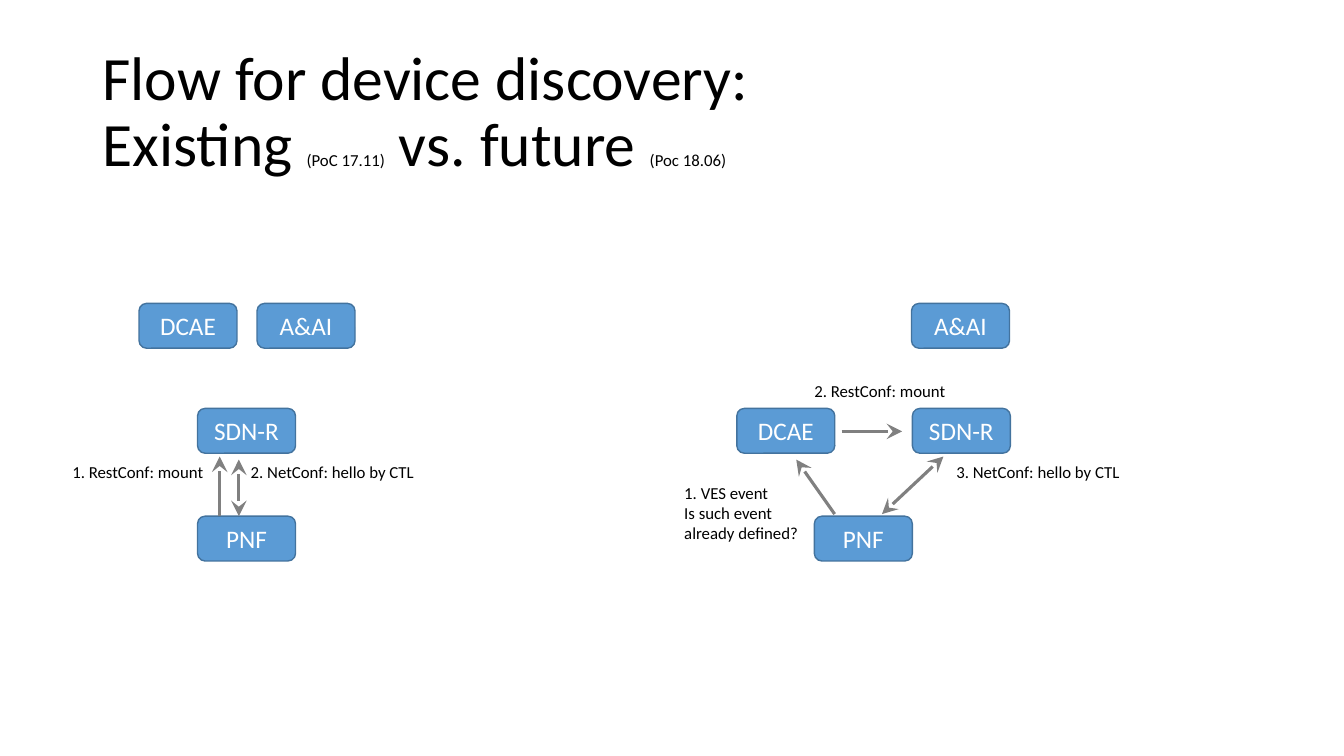
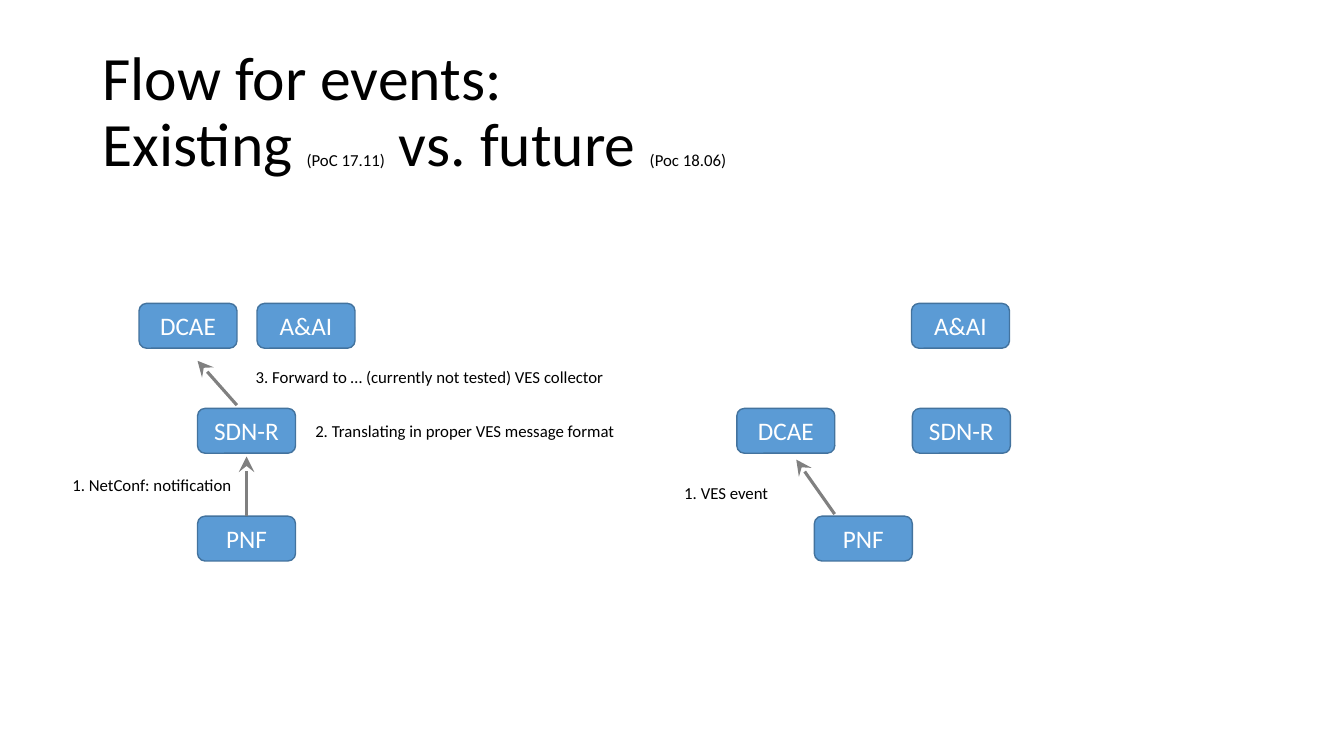
from typing import NamedTuple

from lxml import etree
from pptx import Presentation
from pptx.dml.color import RGBColor
from pptx.enum.shapes import MSO_CONNECTOR, MSO_SHAPE
from pptx.enum.text import MSO_ANCHOR, MSO_AUTO_SIZE, PP_ALIGN
from pptx.oxml.ns import qn
from pptx.util import Pt

FONT = "Calibri"
BLACK = RGBColor(0x00, 0x00, 0x00)
WHITE = RGBColor(0xFF, 0xFF, 0xFF)
NODE_BLUE = RGBColor(0x5B, 0x9B, 0xD5)
NODE_BORDER = RGBColor(0x43, 0x73, 0x9E)
ARROW_GREY = RGBColor(0x80, 0x80, 0x80)

TITLE_SIZE, NOTE_SIZE, NODE_TEXT_SIZE = 44, 12, 18
NODE_WIDTH, NODE_HEIGHT = 70, 32
LABEL_HEIGHT = 21.6

# Both panels share one top edge and three rows of nodes, measured from it.
PANEL_TOP, EXISTING_LEFT, FUTURE_LEFT = 216.7, 44.6, 481.7
ROW_1, ROW_2, ROW_3 = 0, 75, 152

EXISTING_NODES = {
    "DCAE": (54.7, ROW_1),
    "A&AI": (139, ROW_1),
    "SDN-R": (96.5, ROW_2),
    "PNF": (96.5, ROW_3),
}
FUTURE_NODES = {
    "DCAE": (44.6, ROW_2),
    "A&AI": (169.4, ROW_1),
    "SDN-R": (170, ROW_2),
    "PNF": (100, ROW_3),
}


class Arrow(NamedTuple):
    start: tuple
    end: tuple
    two_way: bool = False
    source: str = ""  # node whose top middle the arrow leaves from


class Label(NamedTuple):
    lines: tuple
    left: float
    top: float
    width: float


VES_ARROW = Arrow((114.5, 150.5), (87.1, 111.6))


def add_run(paragraph, text, size, colour):
    run = paragraph.add_run()
    run.text = text
    run.font.name = FONT
    run.font.size = Pt(size)
    run.font.color.rgb = colour


def add_title(slide, subject):
    title = slide.shapes.title
    title.left, title.top, title.width, title.height = Pt(66), Pt(28.8), Pt(828), Pt(104.4)
    frame = title.text_frame
    frame.auto_size = MSO_AUTO_SIZE.NONE
    frame.vertical_anchor = MSO_ANCHOR.MIDDLE
    heading = frame.paragraphs[0]
    heading.alignment = PP_ALIGN.LEFT
    heading.line_spacing = 0.9
    add_run(heading, subject, TITLE_SIZE, BLACK)
    heading.add_line_break()
    for text, size in (
        ("Existing ", TITLE_SIZE),
        ("(PoC 17.11)", NOTE_SIZE),
        (" vs. future ", TITLE_SIZE),
        ("(Poc 18.06)", NOTE_SIZE),
    ):
        add_run(heading, text, size, BLACK)


def add_node(slide, name, left, top):
    node = slide.shapes.add_shape(
        MSO_SHAPE.ROUNDED_RECTANGLE, Pt(left), Pt(top), Pt(NODE_WIDTH), Pt(NODE_HEIGHT)
    )
    node.shadow.inherit = False
    node.fill.solid()
    node.fill.fore_color.rgb = NODE_BLUE
    node.line.color.rgb = NODE_BORDER
    node.line.width = Pt(1)
    node.text_frame.vertical_anchor = MSO_ANCHOR.MIDDLE
    paragraph = node.text_frame.paragraphs[0]
    paragraph.alignment = PP_ALIGN.CENTER
    add_run(paragraph, name, NODE_TEXT_SIZE, WHITE)
    return node


def add_arrow(slide, arrow, left, top, nodes):
    (x1, y1), (x2, y2) = arrow.start, arrow.end
    connector = slide.shapes.add_connector(
        MSO_CONNECTOR.STRAIGHT, Pt(left + x1), Pt(top + y1), Pt(left + x2), Pt(top + y2)
    )
    if arrow.source:
        connector.begin_connect(nodes[arrow.source], 0)
    connector.line.color.rgb = ARROW_GREY
    connector.line.width = Pt(2.25)
    line = connector.line._get_or_add_ln()
    for end in ("a:headEnd", "a:tailEnd") if arrow.two_way else ("a:tailEnd",):
        etree.SubElement(line, qn(end), type="stealth", w="lg", len="lg")
    etree.SubElement(connector._element.spPr, qn("a:effectLst"))


def add_label(slide, label, left, top):
    box = slide.shapes.add_textbox(
        Pt(left + label.left), Pt(top + label.top), Pt(label.width), Pt(LABEL_HEIGHT)
    )
    frame = box.text_frame
    frame.word_wrap = True
    frame.auto_size = MSO_AUTO_SIZE.SHAPE_TO_FIT_TEXT
    paragraph = frame.paragraphs[0]
    for number, text in enumerate(label.lines):
        if number:
            paragraph.add_line_break()
        add_run(paragraph, text, NOTE_SIZE, BLACK)


def add_panel(slide, left, top, places, arrows, labels):
    """Draw one flow; all places are relative to the panel's top left corner."""
    nodes = {
        name: add_node(slide, name, left + x, top + y) for name, (x, y) in places.items()
    }
    for arrow in arrows:
        add_arrow(slide, arrow, left, top, nodes)
    for label in labels:
        add_label(slide, label, left, top)


def add_flow_slide(deck, subject, existing, future):
    """Each flow is a pair: its arrows and its labels."""
    slide = deck.slides.add_slide(deck.slide_layouts[5])
    add_title(slide, subject)
    add_panel(slide, EXISTING_LEFT, PANEL_TOP, EXISTING_NODES, *existing)
    add_panel(slide, FUTURE_LEFT, PANEL_TOP, FUTURE_NODES, *future)


def main():
    deck = Presentation()
    deck.slide_width, deck.slide_height = Pt(960), Pt(540)
    add_flow_slide(
        deck,
        "Flow for device discovery:",
        existing=(
            [
                Arrow((112.3, ROW_3), (112.3, 109.4)),
                Arrow((126, 111.6), (126, ROW_3), two_way=True),
            ],
            [
                Label(("1. RestConf: mount",), 0, 109.4, 111),
                Label(("2. NetConf: hello by CTL",), 127.4, 109.4, 155.5),
            ],
        ),
        future=(
            [
                Arrow((119.5, 91.4), (162.7, 91.4)),
                Arrow((192.2, 109.4), (148.3, 150.5), two_way=True),
                VES_ARROW,
            ],
            [
                Label(("2. RestConf: mount",), 92.9, 51.8, 111),
                Label(("3. NetConf: hello by CTL",), 194.4, 109.4, 155.5),
                Label(("1. VES event", "Is such event already defined?"), 0, 124.6, 111),
            ],
        ),
    )
    add_flow_slide(
        deck,
        "Flow for events:",
        existing=(
            [
                Arrow((131.5, ROW_3), (131.5, 109.4), source="PNF"),
                Arrow((124.6, 72.7), (96.5, 41)),
            ],
            [
                Label(("1. NetConf: notification",), 0, 118.8, 135.4),
                Label(("2. Translating in proper VES message format",), 173.5, 80, 236.2),
                Label(
                    ("3. Forward to … (currently not tested) VES collector",), 131, 41.8, 268.6
                ),
            ],
        ),
        future=([VES_ARROW], [Label(("1. VES event",), 0, 124.6, 111)]),
    )
    deck.save("out.pptx")


if __name__ == "__main__":
    main()
